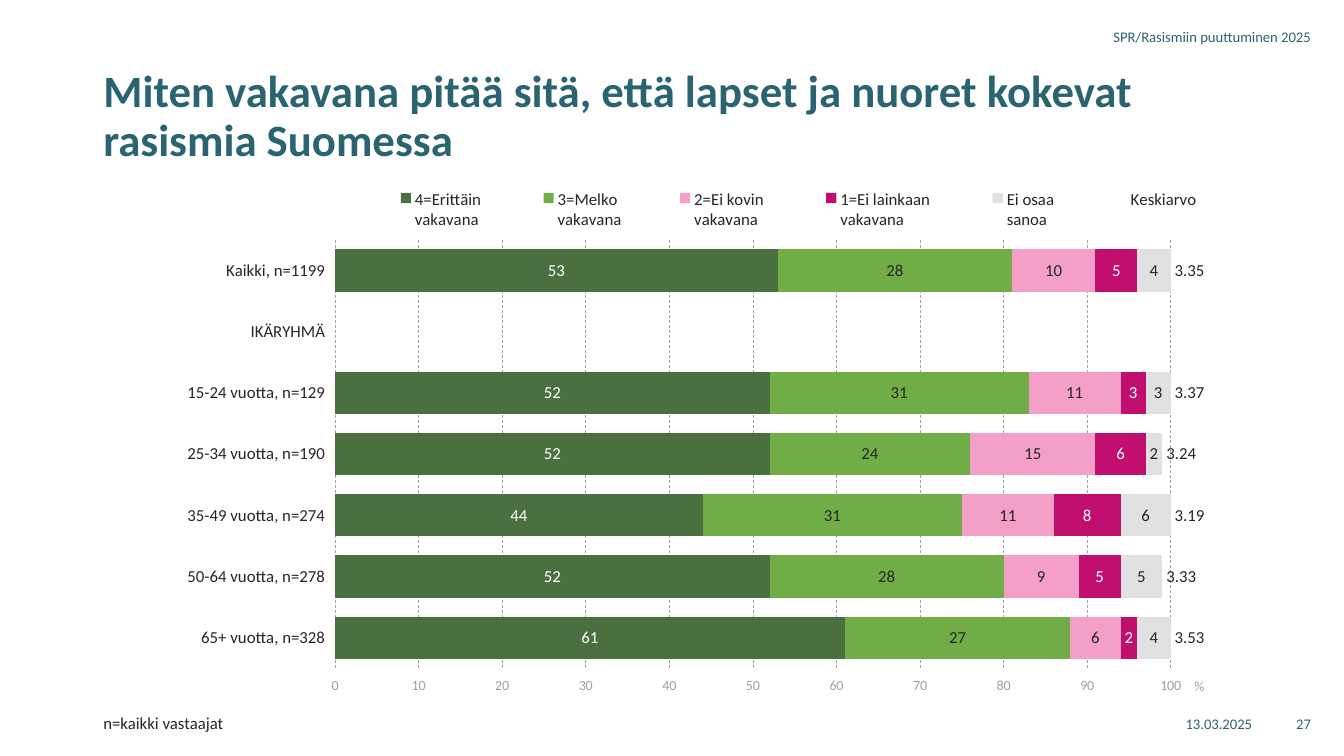
from pptx import Presentation
from pptx.chart.data import CategoryChartData
from pptx.dml.color import RGBColor
from pptx.enum.chart import (XL_CHART_TYPE, XL_LABEL_POSITION, XL_LEGEND_POSITION,
                             XL_TICK_LABEL_POSITION, XL_TICK_MARK)
from pptx.enum.dml import MSO_LINE
from pptx.enum.text import MSO_ANCHOR, PP_ALIGN
from pptx.oxml import parse_xml
from pptx.oxml.ns import nsdecls, qn
from pptx.util import Pt

PX = 9525
FONT = "Calibri"
LEFT, RIGHT = PP_ALIGN.LEFT, PP_ALIGN.RIGHT
TOP, MIDDLE = MSO_ANCHOR.TOP, MSO_ANCHOR.MIDDLE
CENTER, INSIDE_BASE = XL_LABEL_POSITION.CENTER, XL_LABEL_POSITION.INSIDE_BASE
LOW, HIGH = XL_TICK_LABEL_POSITION.LOW, XL_TICK_LABEL_POSITION.HIGH
NO_TICK = XL_TICK_MARK.NONE

COLORS = {
    "teal": "2A6471", "ink": "262626", "slate": "3A4A4E", "grey": "A0A0A0",
    "white": "FFFFFF", "dark green": "4A7040", "green": "70AD47",
    "pink": "F39FC7", "magenta": "C10F70", "light grey": "E1E1E1",
}

GROUPS = ["Kaikki, n=1199", "IKÄRYHMÄ", "15-24 vuotta, n=129", "25-34 vuotta, n=190",
          "35-49 vuotta, n=274", "50-64 vuotta, n=278", "65+ vuotta, n=328"]
# Name, values, fill, label colour
ANSWERS = [
    ("4=Erittäin \nvakavana", [53, None, 52, 52, 44, 52, 61], "dark green", "white"),
    ("3=Melko \nvakavana", [28, None, 31, 24, 31, 28, 27], "green", "ink"),
    ("2=Ei kovin \nvakavana", [10, None, 11, 15, 11, 9, 6], "pink", "ink"),
    ("1=Ei lainkaan \nvakavana", [5, None, 3, 6, 8, 5, 2], "magenta", "white"),
    ("Ei osaa \nsanoa", [4, None, 3, 2, 6, 5, 4], "light grey", "ink"),
    ("Keskiarvo", [3.35, None, 3.37, 3.24, 3.19, 3.33, 3.53], None, "ink"),
]


def color(name):
    return RGBColor.from_string(COLORS[name])


def place(part, x, y, width=None, height=None, inner=False):
    """Give a chart part a manual layout, in fractions of the chart."""
    old = part.find(qn("c:layout"))
    if old is not None:
        part.remove(old)
    target = '<c:layoutTarget val="inner"/>' if inner else ""
    sizes = [(tag, value) for tag, value in
             (("x", x), ("y", y), ("w", width), ("h", height)) if value is not None]
    modes = '<c:xMode val="edge"/><c:yMode val="edge"/>'
    values = "".join(f'<c:{tag} val="{value}"/>' for tag, value in sizes)
    layout = parse_xml(f'<c:layout {nsdecls("c")}><c:manualLayout>{target}{modes}{values}'
                       '</c:manualLayout></c:layout>')
    overlay = part.find(qn("c:overlay"))
    if overlay is None:
        part.insert(0, layout)
    else:
        overlay.addprevious(layout)


class SurveyPage:
    def __init__(self, deck):
        self.page = deck.slides.add_slide(deck.slide_layouts[6])

    def style(self, font, size, name, bold=False):
        font.name, font.size, font.bold = FONT, Pt(size), bold
        font.color.rgb = color(name)

    def text(self, words, x, y, width, height, size, name, align=LEFT, anchor=TOP,
             spacing=None, bold=False):
        box = self.page.shapes.add_textbox(x * PX, y * PX, width * PX, height * PX)
        frame = box.text_frame
        frame.word_wrap = True
        frame.vertical_anchor = anchor
        para = frame.paragraphs[0]
        para.text = words
        para.alignment = align
        para.line_spacing = spacing
        self.style(para.runs[0].font, size, name, bold)

    def stacked_bars(self, x, y, width, height):
        data = CategoryChartData()
        data.categories = GROUPS
        for name, values, _, _ in ANSWERS:
            data.add_series(name, values)
        chart = self.page.shapes.add_chart(XL_CHART_TYPE.BAR_STACKED, x * PX, y * PX,
                                           width * PX, height * PX, data).chart
        chart.has_title = False
        self.style(chart.font, 12, "slate")
        plot = chart.plots[0]
        plot.gap_width, plot.overlap, plot.vary_by_categories = 45, 100, False
        for series, answer in zip(plot.series, ANSWERS):
            self.style_series(series, *answer[2:])
        self.style_axes(chart)

        # Legend and placing
        chart.has_legend = True
        chart.legend.position = XL_LEGEND_POSITION.TOP
        chart.legend.include_in_layout = False
        self.style(chart.legend.font, 12, "ink")
        root = chart.element
        place(root.find(".//" + qn("c:plotArea")), 0.209, 0.126, 0.723, 0.808, inner=True)
        place(root.find(".//" + qn("c:legend")), 0.22, 0.02, 0.79, 0.097)
        place(chart.value_axis.axis_title.element, 0.95, 0.945)

    def style_series(self, series, fill, label_color):
        series.invert_if_negative = False
        if fill:
            series.format.fill.solid()
            series.format.fill.fore_color.rgb = color(fill)
        else:
            series.format.fill.background()
        labels = series.data_labels
        labels.show_value = True
        labels.number_format = "#,##0" if fill else "#,##0.00"
        labels.number_format_is_linked = False
        labels.position = CENTER if fill else INSIDE_BASE
        self.style(labels.font, 12, label_color)

    def style_axes(self, chart):
        groups, percent = chart.category_axis, chart.value_axis
        # With the groups reversed, the high side of the value axis is the bottom
        for axis, size, name, side in ((groups, 12, "ink", LOW), (percent, 10, "grey", HIGH)):
            axis.major_tick_mark = axis.minor_tick_mark = NO_TICK
            axis.format.line.fill.background()
            axis.tick_label_position = side
            self.style(axis.tick_labels.font, size, name)
        groups.reverse_order = True
        # Just above 100, so the mean labels still find room at the edge
        percent.minimum_scale, percent.maximum_scale, percent.major_unit = 0, 100.01, 10
        percent.tick_labels.number_format = "General"
        percent.tick_labels.number_format_is_linked = False
        grid = percent.major_gridlines.format.line
        grid.color.rgb = color("grey")
        grid.width = Pt(0.5)
        grid.dash_style = MSO_LINE.DASH
        para = percent.axis_title.text_frame.paragraphs[0]
        para.text = "%"
        self.style(para.runs[0].font, 10, "grey")


def main():
    deck = Presentation()
    deck.slide_width, deck.slide_height = 1280 * PX, 720 * PX
    survey = SurveyPage(deck)

    # Chart
    survey.stacked_bars(89, 165, 1101, 505)

    # Header and footer
    for words, x, y, width in (("13.03.2025", 914, 670, 288),
                               ("SPR/Rasismiin puuttuminen 2025", 826, 16, 432),
                               ("27", 1215, 670, 43)):
        survey.text(words, x, y, width, 38, 10.5, "teal", align=RIGHT, anchor=MIDDLE)

    # Title and base of respondents
    survey.text("Miten vakavana pitää sitä, että lapset ja nuoret kokevat rasismia Suomessa",
                89, 60, 1101, 101, 32, "teal", spacing=Pt(35), bold=True)
    survey.text("n=kaikki vastaajat", 89, 676, 881, 27, 12, "ink", spacing=0.9)

    deck.save("out.pptx")


if __name__ == "__main__":
    main()
